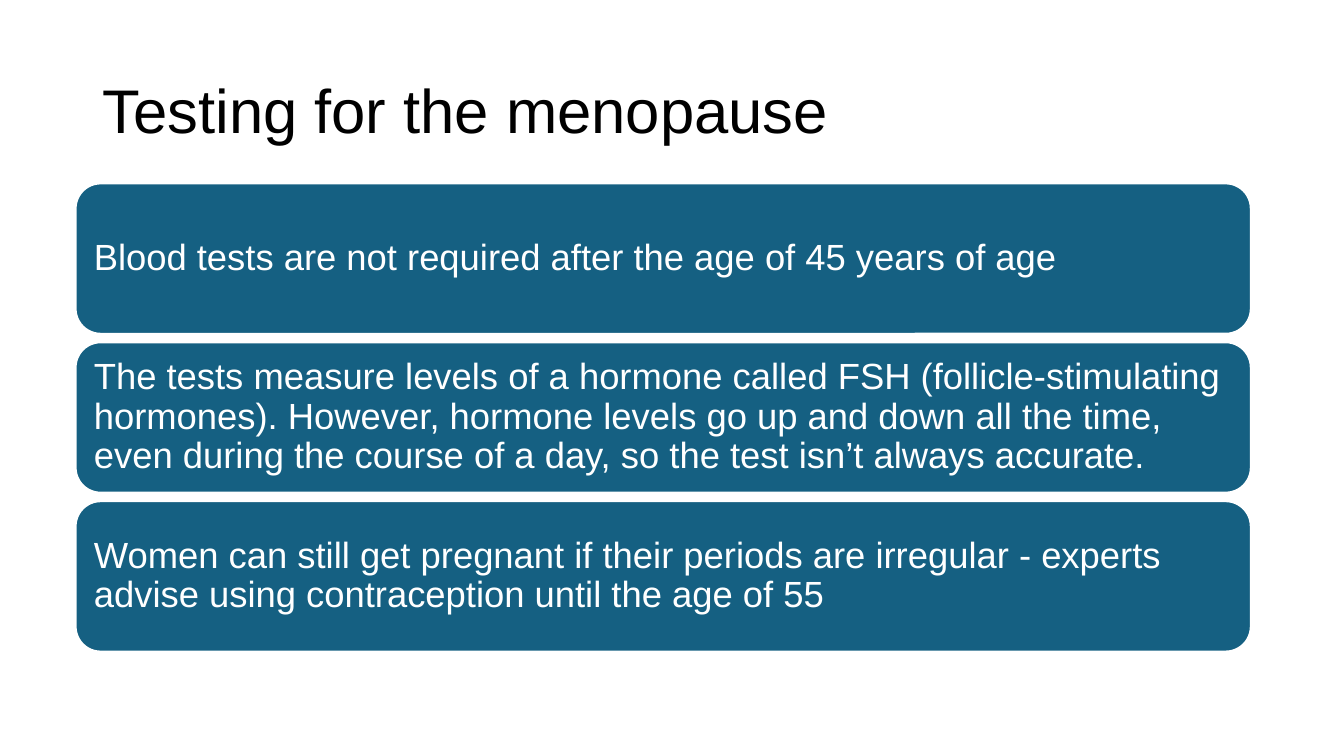
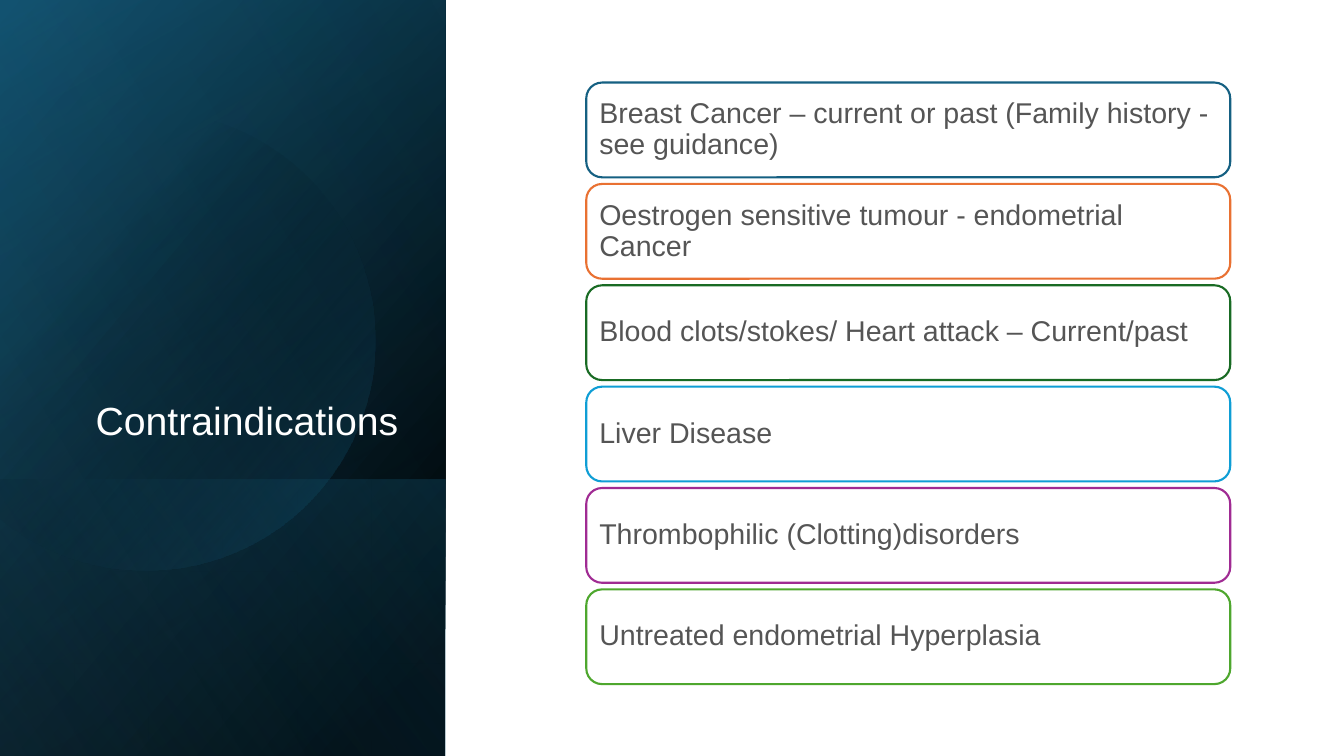
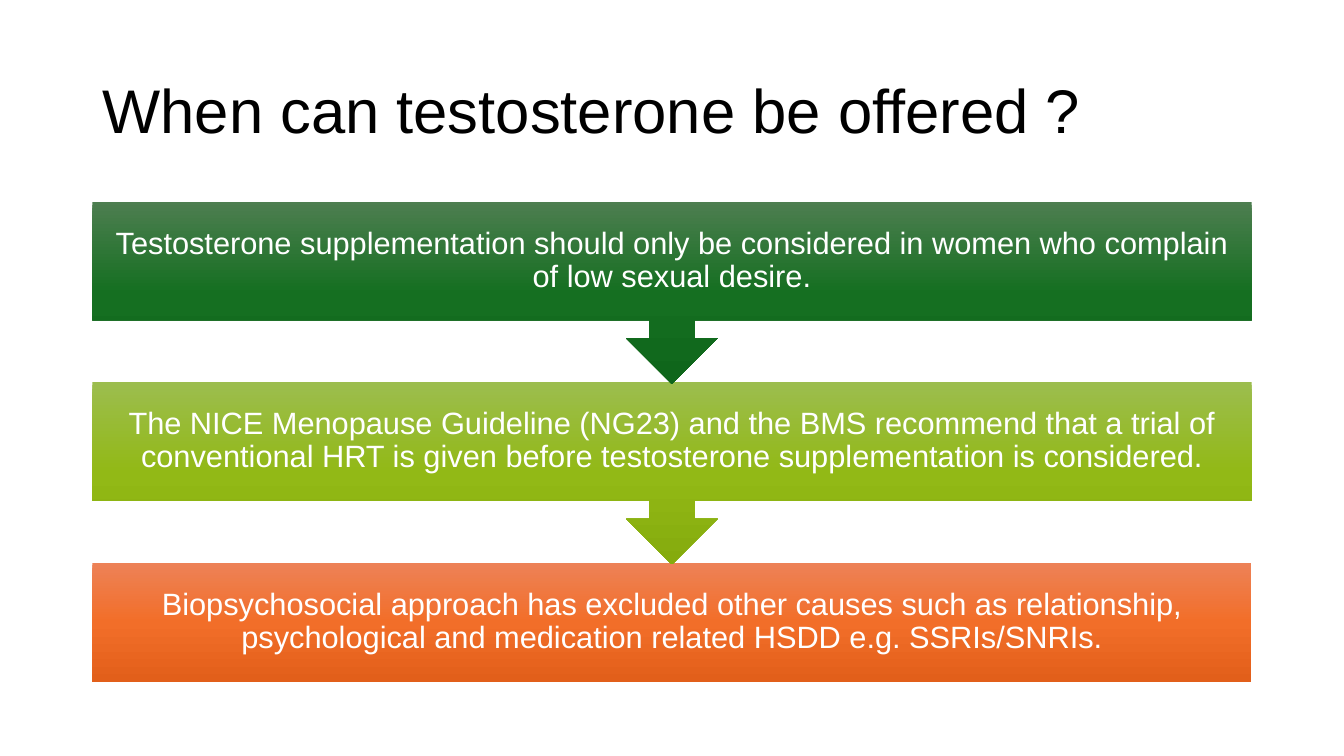
"""Build three slides on menopause care."""
import math

import pptx
import pptx.dml.color
import pptx.enum.shapes
import pptx.enum.text
import pptx.oxml.ns
import pptx.util
from lxml import etree

Pt = pptx.util.Pt
Kind = pptx.enum.shapes.MSO_SHAPE
Align = pptx.enum.text.PP_ALIGN
Anchor = pptx.enum.text.MSO_ANCHOR
qn = pptx.oxml.ns.qn

FONT = "Arial"
WHITE, BLACK, BLUE, GREY = "FFFFFF", "000000", "156082", "555555"

TESTS = [
    "Blood tests are not required after the age of 45 years of age",
    "The tests measure levels of a hormone called FSH (follicle-stimulating hormones). "
    "However, hormone levels go up and down all the time, even during the course of a day, "
    "so the test isn’t always accurate.",
    "Women can still get pregnant if their periods are irregular - experts advise using "
    "contraception until the age of 55",
]
RISKS = [
    ("Breast Cancer – current or past (Family history - see guidance)", BLUE),
    ("Oestrogen sensitive tumour - endometrial Cancer", "E97132"),
    ("Blood clots/stokes/ Heart attack – Current/past", "196B24"),
    ("Liver Disease", "0F9ED5"),
    ("Thrombophilic (Clotting)disorders", "A02B93"),
    ("Untreated endometrial Hyperplasia", "4EA72E"),
]
STEPS = [
    ("Testosterone supplementation should only be considered in women who complain of low "
     "sexual desire.", ("4D7E50", "156F21", "0F661B")),
    ("The NICE Menopause Guideline (NG23) and the BMS recommend that a trial of conventional "
     "HRT is given before testosterone supplementation is considered.",
     ("9CBD4E", "92B916", "85AB0D")),
    ("Biopsychosocial approach has excluded other causes such as relationship, psychological "
     "and medication related HSDD e.g. SSRIs/SNRIs.", ("ED8257", "F26E29", "E25F1A")),
]
PANELS = [
    (0, 540, [(8, BLACK, 100), (100, "104862", 100)], 220),
    (0, 540, [(0, BLACK, 0), (99, BLUE, 46)], 240),
    (342.5, 197.5, [(2, BLUE, 29), (100, BLACK, 30)], 140),
]
SHEEN = (0, 540, [(0, BLACK, 0), (99, "46B1E1", 11)], 150)


def rgb(code):
    """Turn a hex string into a colour."""
    return pptx.dml.color.RGBColor.from_string(code)


def apply(item, values):
    """Set each named value on an item."""
    for name, value in values.items():
        setattr(item, name, value)


def write(shape, text, size, color, align=Align.LEFT, anchor=Anchor.MIDDLE, inset=None):
    """Put one styled paragraph in a shape."""
    frame = shape.text_frame
    apply(frame, {"word_wrap": True, "vertical_anchor": anchor,
                  "auto_size": pptx.enum.text.MSO_AUTO_SIZE.NONE})
    if inset is not None:
        sides = ("left", "top", "right", "bottom")
        apply(frame, {f"margin_{side}": Pt(inset) for side in sides})
    para = frame.paragraphs[0]
    apply(para, {"alignment": align, "line_spacing": 0.9})
    run = para.add_run()
    run.text = text
    apply(run.font, {"name": FONT, "size": Pt(size)})
    run.font.color.rgb = rgb(color)


def head(slide, text, box=(66, 29, 828, 104), size=44, color=BLACK, **style):
    """Place the title above all other shapes."""
    title = slide.shapes.title
    apply(title, dict(zip(("left", "top", "width", "height"), map(Pt, box))))
    write(title, text, size, color, **style)
    title.element.getparent().append(title.element)


def plain(shape, fill=None, line=None):
    """Set a flat fill and a line, with no shadow."""
    shape.shadow.inherit = False
    if fill:
        shape.fill.solid()
        shape.fill.fore_color.rgb = rgb(fill)
    if line:
        shape.line.color.rgb = rgb(line)
        shape.line.width = Pt(1.5)
    else:
        shape.line.fill.background()
    return shape


def blend(shape, stops, angle):
    """Fill a shape with a gradient of position, colour and opacity stops."""
    plain(shape).fill.gradient()
    grad = shape.element.spPr.find(qn("a:gradFill"))
    for child in list(grad):
        grad.remove(child)
    rows = etree.SubElement(grad, qn("a:gsLst"))
    for place, code, alpha in stops:
        stop = etree.SubElement(rows, qn("a:gs"), pos=str(place * 1000))
        tint = etree.SubElement(stop, qn("a:srgbClr"), val=code)
        if alpha < 100:
            etree.SubElement(tint, qn("a:alpha"), val=str(alpha * 1000))
    etree.SubElement(grad, qn("a:lin"), ang=str(angle * 60000), scaled="0")


def block(slide, kind, *box):
    """Add a preset shape at a box in points."""
    return slide.shapes.add_shape(kind, *map(Pt, box))


def panel(slide, top, height, stops, angle):
    """Add one gradient layer of the side band."""
    blend(block(slide, Kind.RECTANGLE, 0, top, 318.24, height), stops, angle)


def disc(slide, x, y, radius):
    """Add the faint circle, cut off at the left edge."""
    limit = math.acos(-x / radius)
    count = 120
    turns = [limit * (2 * i / count - 1) for i in range(count + 1)]
    dots = [(Pt(x + radius * math.cos(t)), Pt(y + radius * math.sin(t))) for t in turns]
    form = slide.shapes.build_freeform(*dots[0])
    form.add_line_segments(dots[1:], close=True)
    blend(form.convert_to_shape(), [(29, BLACK, 0), (100, BLUE, 43)], 40)


def tests(slide):
    """Draw the slide on testing."""
    head(slide, "Testing for the menopause")
    for i, text in enumerate(TESTS):
        card = block(slide, Kind.ROUNDED_RECTANGLE, 54, 131 + 113.5 * i, 839.5, 107.5)
        write(plain(card, BLUE, WHITE), text, 26, WHITE, inset=7.8)


def risks(slide):
    """Draw the slide on contraindications."""
    for layer in PANELS:
        panel(slide, *layer)
    disc(slide, 103.7, 243.4, 164.2)
    panel(slide, *SHEEN)
    head(slide, "Contraindications", (46, 132.5, 245.5, 188.5), 28, WHITE,
         align=Align.RIGHT, anchor=Anchor.BOTTOM)
    for i, (text, color) in enumerate(RISKS):
        card = block(slide, Kind.ROUNDED_RECTANGLE, 418.8, 59 + 72.4 * i, 460, 67.7)
        write(plain(card, WHITE, color), text, 20.4, GREY, inset=6)


def steps(slide):
    """Draw the slide on testosterone."""
    head(slide, "When can testosterone be offered ?")
    for i, (text, colors) in reversed(list(enumerate(STEPS))):
        last = i == len(STEPS) - 1
        kind = Kind.RECTANGLE if last else Kind.DOWN_ARROW_CALLOUT
        step = block(slide, kind, 66, 144 + 128.9 * i, 828, 85 if last else 130.3)
        blend(step, [(50 * n, code, 100) for n, code in enumerate(colors)], 90)
        write(step, text, 22, WHITE, align=Align.CENTER, inset=12.3)


def main():
    """Build and save the deck."""
    deck = pptx.Presentation()
    apply(deck, {"slide_width": Pt(960), "slide_height": Pt(540)})
    for draw in (tests, risks, steps):
        draw(deck.slides.add_slide(deck.slide_layouts[5]))
    deck.save("out.pptx")


if __name__ == "__main__":
    main()
